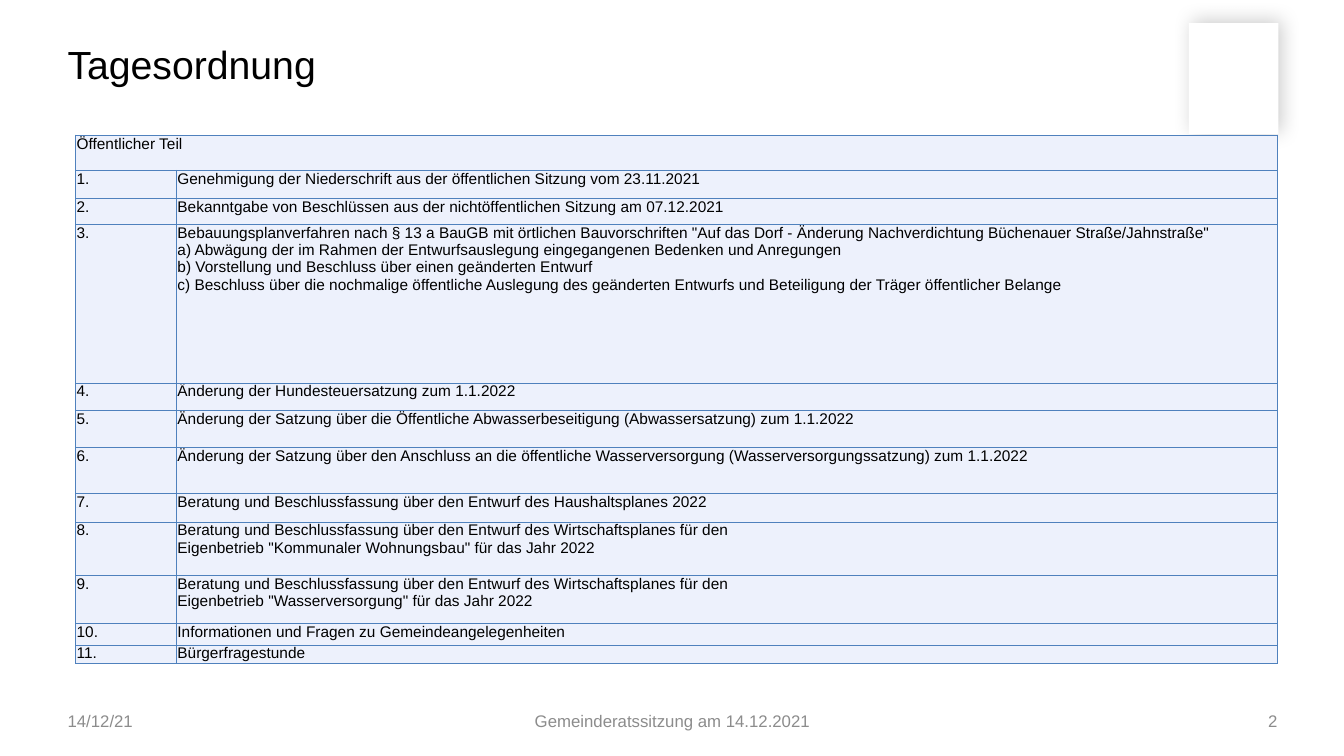
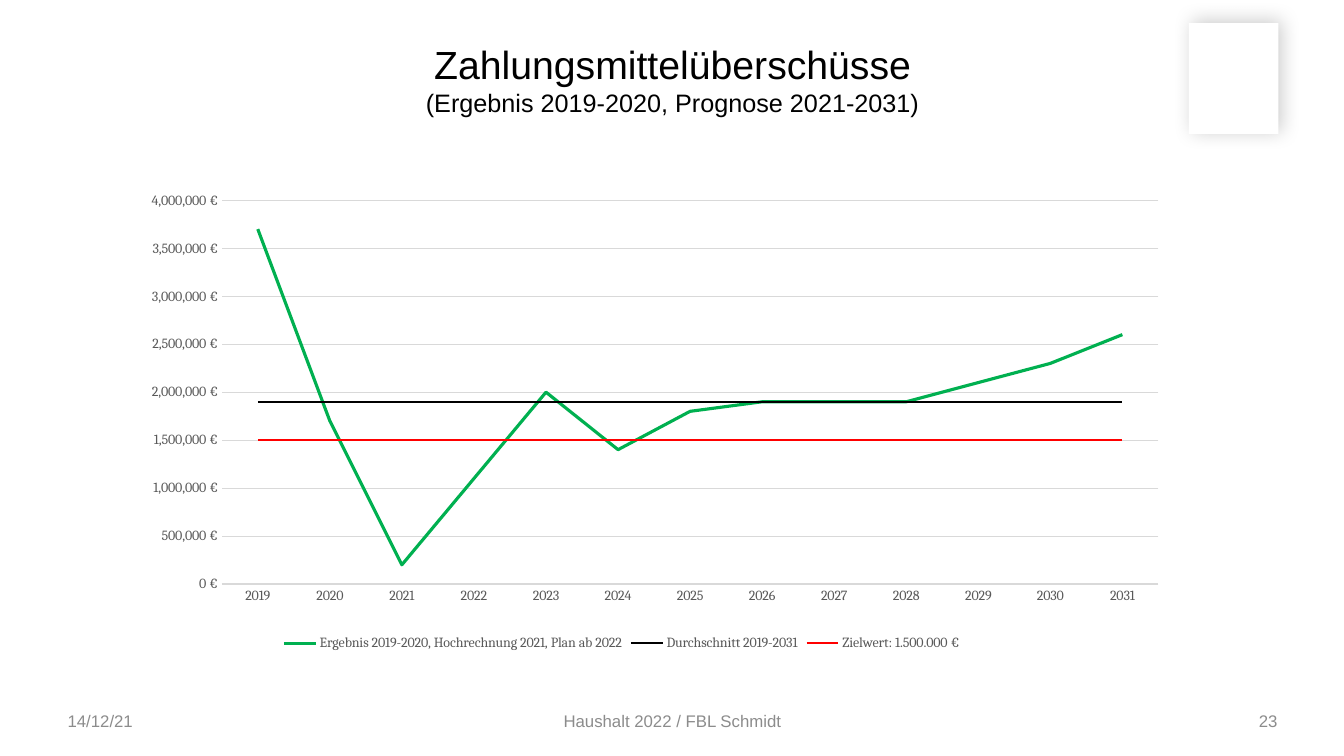
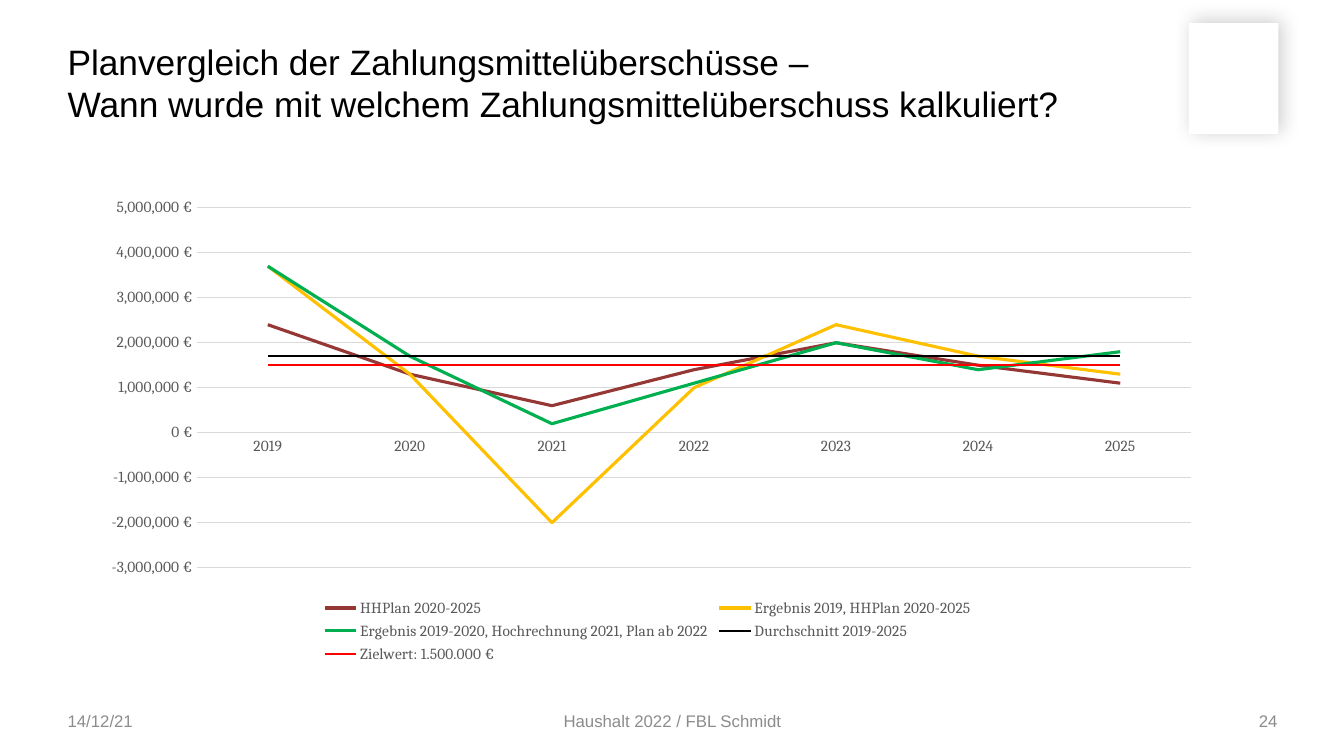
from lxml.etree import SubElement
from pptx import Presentation
from pptx.chart.data import CategoryChartData
from pptx.dml.color import RGBColor
from pptx.enum.chart import XL_CHART_TYPE as ChartType, XL_LEGEND_POSITION as LegendPosition
from pptx.enum.chart import XL_TICK_MARK as TickMark
from pptx.enum.shapes import MSO_SHAPE as Shape
from pptx.enum.text import MSO_ANCHOR as Anchor, PP_ALIGN as Align
from pptx.oxml import parse_xml
from pptx.oxml.ns import nsdecls, qn
from pptx.util import Pt

PX = 9144
BLACK, WHITE, GREY = "000000", "FFFFFF", "8C8C8C"
AXIS_TEXT, GRID = "595959", "D9D9D9"
CELL_FILL, CELL_LINE = "EDF1FC", "4F81BD"
GREEN, RED, YELLOW, BROWN = "00B050", "FF0000", "FFC000", "953735"
BODY_FONT, CHART_FONT = "Arial", "Cambria"
DATE = "14/12/21"
BUDGET_FOOTER = "Haushalt 2022 / FBL Schmidt"
TITLE_BOX = (67, 35, 1200, 100)
PANEL_BOX = (1179, 23, 89, 110)
FOOTER_BOX = (67, 695, 1200, 40)
AGENDA_BOX = (75, 134, 1192)
NUMBER_WIDTH = 100

AGENDA = [
    (35, "Öffentlicher Teil"),
    (28, "Genehmigung der Niederschrift aus der öffentlichen Sitzung vom 23.11.2021"),
    (26, "Bekanntgabe von Beschlüssen aus der nichtöffentlichen Sitzung am 07.12.2021"),
    (157, "Bebauungsplanverfahren nach § 13 a BauGB mit örtlichen Bauvorschriften "
          "\"Auf das Dorf - Änderung Nachverdichtung Büchenauer Straße/Jahnstraße\"\n"
          "a) Abwägung der im Rahmen der Entwurfsauslegung eingegangenen Bedenken und Anregungen\n"
          "b) Vorstellung und Beschluss über einen geänderten Entwurf\n"
          "c) Beschluss über die nochmalige öffentliche Auslegung des geänderten Entwurfs "
          "und Beteiligung der Träger öffentlicher Belange"),
    (27, "Änderung der Hundesteuersatzung zum 1.1.2022"),
    (37, "Änderung der Satzung über die Öffentliche Abwasserbeseitigung (Abwassersatzung) zum 1.1.2022"),
    (46, "Änderung der Satzung über den Anschluss an die öffentliche Wasserversorgung "
         "(Wasserversorgungssatzung) zum 1.1.2022"),
    (28, "Beratung und Beschlussfassung über den Entwurf des Haushaltsplanes 2022"),
    (53, "Beratung und Beschlussfassung über den Entwurf des Wirtschaftsplanes für den\n"
         "Eigenbetrieb \"Kommunaler Wohnungsbau\" für das Jahr 2022"),
    (48, "Beratung und Beschlussfassung über den Entwurf des Wirtschaftsplanes für den\n"
         "Eigenbetrieb \"Wasserversorgung\" für das Jahr 2022"),
    (21, "Informationen und Fragen zu Gemeindeangelegenheiten"),
    (18, "Bürgerfragestunde"),
]

MILLION = 1000000
RESULT_NAME = "Ergebnis 2019-2020, Hochrechnung 2021, Plan ab 2022"
TARGET_NAME = "Zielwert: 1.500.000 €"
RESULTS = [3.7, 1.7, 0.2, 1.1, 2.0, 1.4, 1.8, 1.9, 1.9, 1.9, 2.1, 2.3, 2.6]
SURPLUS_SERIES = [
    (RESULT_NAME, RESULTS, GREEN, 2.25),
    ("Durchschnitt 2019-2031", [1.9] * 13, BLACK, 1.75),
    (TARGET_NAME, [1.5] * 13, RED, 1.25),
]
PLAN_SERIES = [
    ("HHPlan 2020-2025", [2.4, 1.3, 0.6, 1.4, 2.0, 1.5, 1.1], BROWN, 2.25),
    ("Ergebnis 2019, HHPlan 2020-2025", [3.7, 1.3, -2.0, 1.0, 2.4, 1.7, 1.3], YELLOW, 2.25),
    (RESULT_NAME, RESULTS[:7], GREEN, 2.25),
    ("Durchschnitt 2019-2025", [1.7] * 7, BLACK, 1.5),
    (TARGET_NAME, [1.5] * 7, RED, 1.5),
]


def rgb(value):
    """Turn a hex string into a colour."""
    return RGBColor.from_string(value)


def emu(box):
    """Turn px lengths into EMU."""
    return [length * PX for length in box]


def style_font(font, size, color, name=BODY_FONT):
    """Set size, colour and typeface of a font."""
    font.size, font.name = Pt(size), name
    font.color.rgb = rgb(color)


def style_line(line, color, width):
    """Set colour and width of a line."""
    line.color.rgb, line.width = rgb(color), Pt(width)


def add_text(page, box, text, size, color, align=Align.LEFT, anchor=Anchor.MIDDLE):
    """Place one paragraph of text flush with its box and return it."""
    frame = page.shapes.add_textbox(*emu(box)).text_frame
    frame.word_wrap, frame.vertical_anchor = True, anchor
    frame.margin_left = frame.margin_right = 0
    para = frame.paragraphs[0]
    para.text, para.alignment = text, align
    style_font(para.font, size, color)
    return para


def add_panel(page, box):
    """Place the white corner panel with its soft shadow."""
    panel = page.shapes.add_shape(Shape.RECTANGLE, *emu(box))
    panel.shadow.inherit = False
    panel.fill.solid()
    panel.fill.fore_color.rgb = rgb(WHITE)
    panel.line.fill.background()
    effects = panel._element.spPr.find(qn("a:effectLst"))
    effects.append(parse_xml(
        f'<a:outerShdw {nsdecls("a")} blurRad="{Pt(14.2)}" dist="{Pt(3)}" dir="{325 * 60000}" '
        f'algn="ctr" rotWithShape="0"><a:srgbClr val="{BLACK}"><a:alpha val="20000"/>'
        '</a:srgbClr></a:outerShdw>'))


def add_footer(page, box, text, number):
    """Place date, footer text and page number along a strip."""
    left, top, width, height = box
    side = 311
    add_text(page, (left, top, side, height), DATE, 12, GREY)
    add_text(page, (left + side, top, width - 2 * side, height), text, 12, GREY, Align.CENTER)
    add_text(page, (left + width - side, top, side, height), str(number), 12, GREY, Align.RIGHT)


def add_page(deck, title, footer, number, size=28, align=Align.LEFT, subtitle=None):
    """Add a page with corner panel, title and footer."""
    page = deck.slides.add_slide(deck.slide_layouts[6])
    add_panel(page, PANEL_BOX)
    para = add_text(page, TITLE_BOX, title, size, BLACK, align, Anchor.TOP)
    if subtitle:
        para.add_line_break()
        span = para.add_run()
        span.text, span.font.size = subtitle, Pt(18)
    add_footer(page, FOOTER_BOX, footer, number)
    return page


def style_cell(cell, text):
    """Fill, frame and label one table cell."""
    cell.margin_left = cell.margin_right = PX
    cell.margin_top = cell.margin_bottom = 0
    para = cell.text_frame.paragraphs[0]
    para.text = text
    style_font(para.font, 11, BLACK)
    properties = cell._tc.get_or_add_tcPr()
    for side in ("lnL", "lnR", "lnT", "lnB"):
        border = SubElement(properties, qn(f"a:{side}"), w=str(Pt(0.75)))
        SubElement(SubElement(border, qn("a:solidFill")), qn("a:srgbClr"), val=CELL_LINE)
    cell.fill.solid()
    cell.fill.fore_color.rgb = rgb(CELL_FILL)


def add_agenda(page, box, items):
    """Place the numbered agenda under a heading row that spans both columns."""
    left, top, width = box
    height = sum(item[0] for item in items)
    table = page.shapes.add_table(len(items), 2, *emu((left, top, width, height))).table
    table.columns[0].width, table.columns[1].width = emu((NUMBER_WIDTH, width - NUMBER_WIDTH))
    for index, (row_height, text) in enumerate(items):
        table.rows[index].height = row_height * PX
        labels = (f"{index}.", text) if index else (text, "")
        for column, label in enumerate(labels):
            style_cell(table.cell(index, column), label)
    table.cell(0, 0).merge(table.cell(0, 1))


def set_plot_layout(chart, fractions):
    """Fix the inner plot area as fractions of the chart."""
    area = chart._chartSpace.chart.plotArea
    for layout in area.findall(qn("c:layout")):
        area.remove(layout)
    modes = '<c:layoutTarget val="inner"/><c:xMode val="edge"/><c:yMode val="edge"/>'
    values = "".join(f'<c:{key} val="{value}"/>' for key, value in zip("xywh", fractions))
    area.insert(0, parse_xml(
        f'<c:layout {nsdecls("c")}><c:manualLayout>{modes}{values}</c:manualLayout></c:layout>'))


def add_line_chart(page, box, series, scale, size, plot_layout):
    """Place a line chart by year with amounts in euros."""
    data = CategoryChartData(number_format='#,##0\\ "€"')
    data.categories = [str(2019 + index) for index in range(len(series[0][1]))]
    for name, values, _, _ in series:
        data.add_series(name, [round(value * MILLION) for value in values])
    chart = page.shapes.add_chart(ChartType.LINE, *emu(box), data).chart
    chart.has_title = False
    style_font(chart.font, size, BLACK, CHART_FONT)
    chart.has_legend = True
    chart.legend.position, chart.legend.include_in_layout = LegendPosition.BOTTOM, False
    amounts, years = chart.value_axis, chart.category_axis
    for part in (chart.legend.font, amounts.tick_labels.font, years.tick_labels.font):
        style_font(part, size, AXIS_TEXT, CHART_FONT)
    for axis in (amounts, years):
        axis.major_tick_mark = axis.minor_tick_mark = TickMark.NONE
    amounts.minimum_scale, amounts.maximum_scale, amounts.major_unit = [
        round(value * MILLION) for value in scale]
    amounts.tick_labels.number_format = '#,##0\\ "€"'
    amounts.tick_labels.number_format_is_linked = False
    amounts.format.line.fill.background()
    style_line(amounts.major_gridlines.format.line, GRID, 0.75)
    style_line(years.format.line, GRID, 0.75)
    plot = chart.plots[0]
    plot.vary_by_categories = False
    for curve, (_, _, color, width) in zip(plot.series, series):
        curve.smooth = False
        style_line(curve.format.line, color, width)
    set_plot_layout(chart, plot_layout)


def main():
    """Build and save the deck."""
    deck = Presentation()
    deck.slide_width, deck.slide_height = emu((1333, 750))
    agenda = add_page(deck, "Tagesordnung", "Gemeinderatssitzung am 14.12.2021", 2)
    add_agenda(agenda, AGENDA_BOX, AGENDA)
    surplus = add_page(deck, "Zahlungsmittelüberschüsse", BUDGET_FOOTER, 23, align=Align.CENTER,
                       subtitle="(Ergebnis 2019-2020, Prognose 2021-2031)")
    add_line_chart(surplus, (50, 180, 1133, 470), SURPLUS_SERIES, (0, 4, 0.5), 10,
                   (0.15, 0.04, 0.82, 0.81))
    plans = add_page(deck, "Planvergleich der Zahlungsmittelüberschüsse –\n"
                     "Wann wurde mit welchem Zahlungsmittelüberschuss kalkuliert?",
                     BUDGET_FOOTER, 24, size=25.2)
    add_line_chart(plans, (69, 192, 1147, 470), PLAN_SERIES, (-3, 5, 1), 11,
                   (0.11, 0.03, 0.86, 0.76))
    deck.save("out.pptx")


if __name__ == "__main__":
    main()
